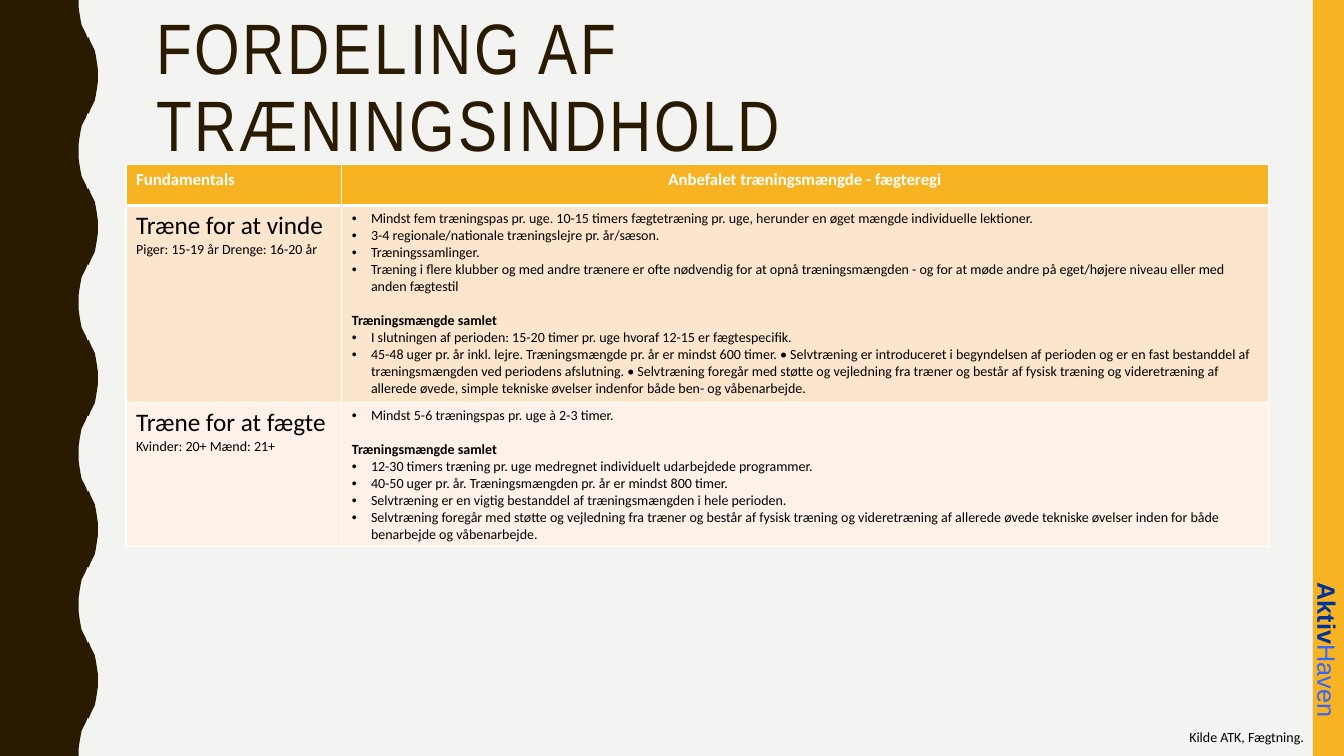
import pptx
import pptx.util
import pptx.dml.color
import pptx.enum.shapes
import pptx.enum.text
import pptx.oxml.ns
import lxml.etree

# Content: bullets are (kind, text) pairs
TITLE = "FORDELING AF TRÆNINGSINDHOLD"
SOURCE = "Kilde ATK, Fægtning."
BRAND = [("Aktiv", "003399", True), ("Haven", "3366FF", False)]
HEADERS = ["Fundamentals", "Anbefalet træningsmængde - fægteregi"]
TOTAL = ("head", "Træningsmængde samlet")
LEVELS = [
    ("Træne for at vinde", "Piger: 15-19 år Drenge: 16-20 år", "FCE5CD", [
        ("bullet", "Mindst fem træningspas pr. uge. 10-15 timers fægtetræning pr. uge, "
                   "herunder en øget mængde individuelle lektioner."),
        ("bullet", "3-4 regionale/nationale træningslejre pr. år/sæson."),
        ("bullet", "Træningssamlinger."),
        ("bullet", "Træning i flere klubber og med andre trænere er ofte nødvendig for at opnå "
                   "træningsmængden - og for at møde andre på eget/højere niveau eller med "
                   "anden fægtestil"),
        TOTAL,
        ("bullet", "I slutningen af perioden: 15-20 timer pr. uge hvoraf 12-15 er fægtespecifik."),
        ("bullet", "45-48 uger pr. år inkl. lejre. Træningsmængde pr. år er mindst 600 timer. "
                   "• Selvtræning er introduceret i begyndelsen af perioden og er en fast "
                   "bestanddel af træningsmængden ved periodens afslutning. • Selvtræning foregår "
                   "med støtte og vejledning fra træner og består af fysisk træning og "
                   "videretræning af allerede øvede, simple tekniske øvelser indenfor både "
                   "ben- og våbenarbejde."),
    ]),
    ("Træne for at fægte", "Kvinder: 20+ Mænd: 21+", "FEF2E8", [
        ("bullet", "Mindst 5-6 træningspas pr. uge à 2-3 timer."),
        TOTAL,
        ("bullet", "12-30 timers træning pr. uge medregnet individuelt udarbejdede programmer."),
        ("bullet", "40-50 uger pr. år. Træningsmængden pr. år er mindst 800 timer."),
        ("bullet", "Selvtræning er en vigtig bestanddel af træningsmængden i hele perioden."),
        ("bullet", "Selvtræning foregår med støtte og vejledning fra træner og består af fysisk "
                   "træning og videretræning af allerede øvede tekniske øvelser inden for både "
                   "benarbejde og våbenarbejde."),
    ]),
]

# Layout in inches
WIDTH, HEIGHT = 13.33, 7.5
BAND = 0.31
COLS = [2.14, 9.19]
ROWS = [0.41, 1.95, 1.41]
INDENT = 0.19
WAVES = 5
QUARTER = [(0.78, 0), (0.78, 0.07), (0.79, 0.14), (0.8, 0.2),
           (0.81, 0.25), (0.83, 0.29), (0.85, 0.33), (0.87, 0.38)]
DARK, AMBER, WHITE, BLACK = "2A1A00", "F8B323", "FFFFFF", "000000"

Inches, Pt = pptx.util.Inches, pptx.util.Pt
ALIGN = pptx.enum.text.PP_ALIGN
qn = pptx.oxml.ns.qn


def rgb(color):
    return pptx.dml.color.RGBColor.from_string(color)


def paint(sp, color):
    sp.fill.solid()
    sp.fill.fore_color.rgb = rgb(color)
    sp.line.fill.background()
    sp.shadow.inherit = False


def style(r, size, color=BLACK, bold=False, font="Calibri"):
    r.font.size, r.font.bold, r.font.name = Pt(size), bold, font
    r.font.color.rgb = rgb(color)


def add_text(x, y, w, h, align=ALIGN.LEFT):
    sp = s.shapes.add_textbox(Inches(x), Inches(y), Inches(w), Inches(h))
    sp.text_frame.word_wrap = True
    p = sp.text_frame.paragraphs[0]
    p.alignment = align
    return sp, p


def add_run(p, text, *args, **kwargs):
    r = p.add_run()
    r.text = text
    style(r, *args, **kwargs)
    return r


def add_bullet(p):
    pPr = p._p.get_or_add_pPr()
    pPr.set("marL", str(Inches(INDENT)))
    pPr.set("indent", str(-Inches(INDENT)))
    lxml.etree.SubElement(pPr, qn("a:buFont")).set("typeface", "Arial")
    lxml.etree.SubElement(pPr, qn("a:buChar")).set("char", "•")


def format_cell(cell, color, bottom=1):
    tcPr = cell._tc.get_or_add_tcPr()
    for side, width in (("L", 1), ("R", 1), ("T", 1), ("B", bottom)):
        ln = lxml.etree.SubElement(tcPr, qn("a:ln" + side), w=str(Pt(width)))
        fill = lxml.etree.SubElement(ln, qn("a:solidFill"))
        lxml.etree.SubElement(fill, qn("a:srgbClr"), val=WHITE)
    cell.fill.solid()
    cell.fill.fore_color.rgb = rgb(color)


prs = pptx.Presentation()
prs.slide_width, prs.slide_height = Inches(WIDTH), Inches(HEIGHT)
s = prs.slides.add_slide(prs.slide_layouts[6])
s.background.fill.solid()
s.background.fill.fore_color.rgb = rgb("F3F3F2")

# Wavy left edge: a quarter wave is turned into a half, then mirrored
period = HEIGHT / WAVES
half = QUARTER + [(1.75 - x, period / 2 - y) for x, y in reversed(QUARTER)]
wave = half + [(x, period - y) for x, y in reversed(half)]
edge = [(x, y + i * period) for i in range(WAVES) for x, y in wave]
builder = s.shapes.build_freeform(0, 0)
builder.add_line_segments([(Inches(x), Inches(y)) for x, y in edge + [(0, HEIGHT)]])
paint(builder.convert_to_shape(), DARK)

# Right band with the vertical name
band = s.shapes.add_shape(pptx.enum.shapes.MSO_SHAPE.RECTANGLE, Inches(WIDTH - BAND), 0,
                          Inches(BAND), Inches(HEIGHT))
paint(band, AMBER)
sp, p = add_text(9.56, 3.44, 7.29, 0.4, ALIGN.RIGHT)
sp.rotation = 90
sp.text_frame.margin_right = Inches(0.17)
sp.text_frame.margin_top, sp.text_frame.margin_bottom = Inches(0.09), 0
for text, color, bold in BRAND:
    add_run(p, text, 18, color, bold, "Arial")

# Title
sp, p = add_text(1.45, 0.08, 11.13, 1.63)
sp.text_frame.vertical_anchor = pptx.enum.text.MSO_ANCHOR.MIDDLE
sp.text_frame.margin_right = Inches(0.5)
p.line_spacing = 0.9
r = add_run(p, TITLE, 51, DARK, font="Arial Narrow")
r._r.get_or_add_rPr().set("spc", "200")

# Table
table = s.shapes.add_table(len(ROWS), len(COLS), Inches(1.25), Inches(1.63),
                           Inches(sum(COLS)), Inches(sum(ROWS))).table
for col, width in zip(table.columns, COLS):
    col.width = Inches(width)
for row, height in zip(table.rows, ROWS):
    row.height = Inches(height)
for c, (text, align) in enumerate(zip(HEADERS, (ALIGN.LEFT, ALIGN.CENTER))):
    cell = table.cell(0, c)
    format_cell(cell, AMBER, bottom=3)
    p = cell.text_frame.paragraphs[0]
    p.alignment = align
    add_run(p, text, 12, WHITE, True)
for i, (level, ages, color, items) in enumerate(LEVELS, start=1):
    name, advice = table.cell(i, 0), table.cell(i, 1)
    for cell in (name, advice):
        format_cell(cell, color)
    name.text_frame.text = level + "\n" + ages
    for p, size in zip(name.text_frame.paragraphs, (18, 10)):
        style(p.runs[0], size)
    advice.text_frame.text = "\n".join(text for kind, text in items)
    for p, (kind, text) in zip(advice.text_frame.paragraphs, items):
        style(p.runs[0], 10, bold=kind == "head")
        if kind == "head":
            p.space_before = Pt(12)
        else:
            add_bullet(p)

# Source line
sp, p = add_text(4.03, 7.18, 9, 0.27, ALIGN.RIGHT)
add_run(p, SOURCE, 10)

prs.save("out.pptx")
